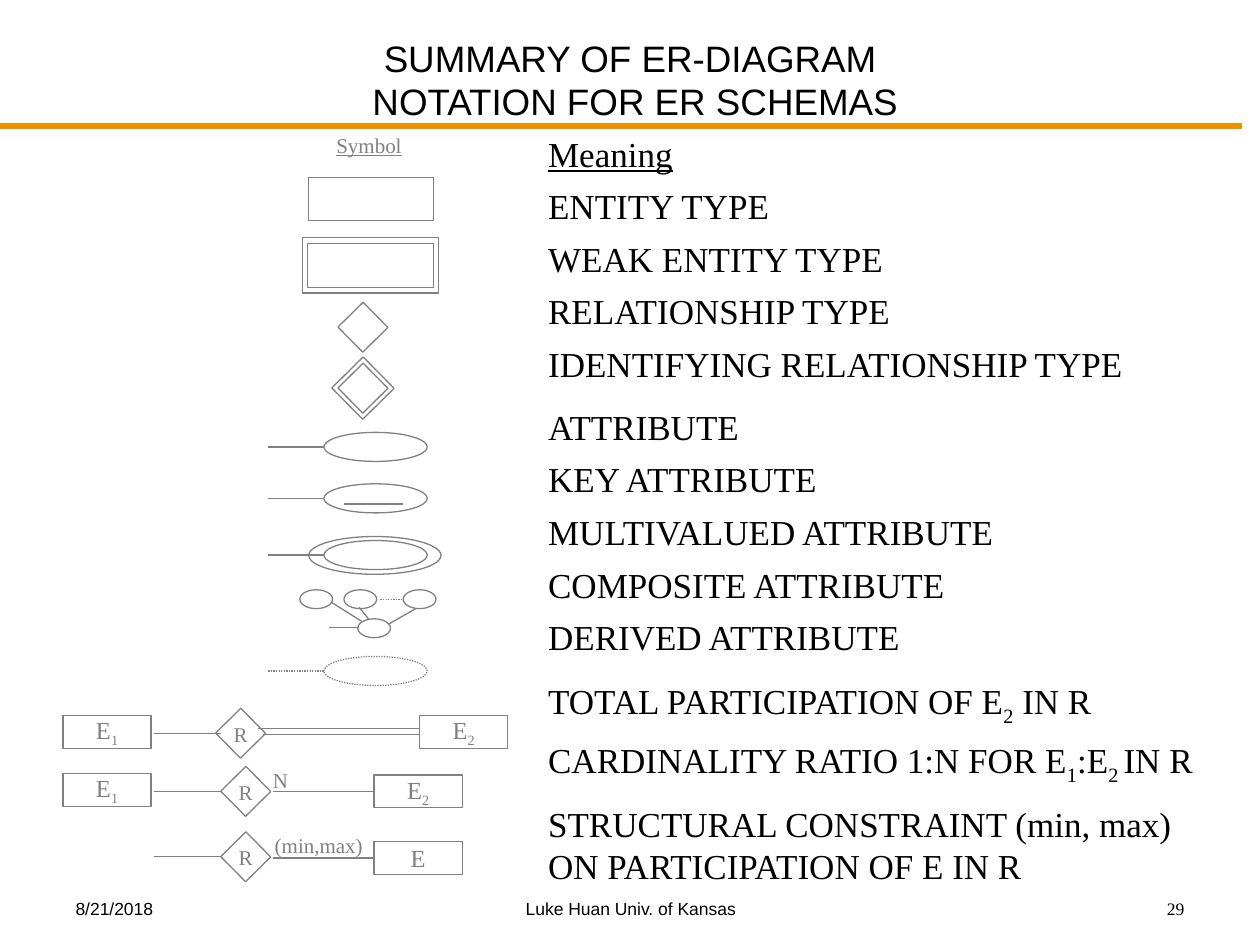
from lxml import etree
from pptx import Presentation, util as u
from pptx.dml.color import RGBColor
from pptx.enum import dml, shapes, text
from pptx.oxml.ns import qn

Pt = u.Pt
COLOURS = {"ink": "000000", "symbol": "808080", "rule": "EF9100"}
SERIF, SANS = "Times New Roman", "Arial"
LEFT, CENTER, RIGHT = text.PP_ALIGN.LEFT, text.PP_ALIGN.CENTER, text.PP_ALIGN.RIGHT
RECT, OVAL = shapes.MSO_SHAPE.RECTANGLE, shapes.MSO_SHAPE.OVAL
DOTTED = dml.MSO_LINE.ROUND_DOT


class SlideBuilder:
    def __init__(self, slide):
        self.slide = slide

    def colour(self, name):
        return RGBColor.from_string(COLOURS[name])

    def frame(self, shape, anchor, wrap):
        frame = shape.text_frame
        frame.margin_left = frame.margin_right = frame.margin_top = frame.margin_bottom = 0
        frame.vertical_anchor = anchor
        frame.word_wrap = wrap
        return frame

    def add_runs(self, paragraph, content, size, font=SERIF, colour="ink",
                 align=LEFT, underline=False):
        paragraph.alignment = align
        for index, part in enumerate(content.split("_")):
            run = paragraph.add_run()
            run.text = part
            run.font.size = Pt(size)
            run.font.name = font
            run.font.color.rgb = self.colour(colour)
            if underline:
                run.font.underline = True
            if index % 2:
                run._r.get_or_add_rPr().set("baseline", "-25000")

    def textbox(self, left, top, width, height, anchor=text.MSO_ANCHOR.TOP, wrap=True):
        box = self.slide.shapes.add_textbox(Pt(left), Pt(top), Pt(width), Pt(height))
        return self.frame(box, anchor, wrap)

    def label(self, content, left, top, width, size=12, **style):
        frame = self.textbox(left, top, width, size * 1.2, wrap=False)
        self.add_runs(frame.paragraphs[0], content, size, **style)

    def outline(self, kind, x, y, width, height, dash=None, rotation=0):
        shape = self.slide.shapes.add_shape(
            kind, Pt(x - width / 2), Pt(y - height / 2), Pt(width), Pt(height))
        shape.shadow.inherit = False
        shape.rotation = rotation
        shape.fill.background()
        self.stroke(shape.line, "symbol", 0.75, dash)
        return shape

    def stroke(self, line, colour, width, dash):
        line.color.rgb = self.colour(colour)
        line.width = Pt(width)
        if dash:
            line.dash_style = dash

    def line(self, x1, y1, x2, y2, dash=None, colour="symbol", width=0.75):
        connector = self.slide.shapes.add_connector(
            shapes.MSO_CONNECTOR.STRAIGHT, Pt(x1), Pt(y1), Pt(x2), Pt(y2))
        self.stroke(connector.line, colour, width, dash)
        etree.SubElement(connector._element.spPr, qn("a:effectLst"))

    def diamond(self, x, y, side=20.2, content=None):
        self.outline(RECT, x, y, side, side, rotation=45.4)
        if content:
            self.label(content, x - 10, y - 6.9, 20, colour="symbol", align=CENTER)

    def entity(self, content, left, y):
        shape = self.outline(RECT, left + 25.2, y, 50.4, 18.7)
        frame = self.frame(shape, text.MSO_ANCHOR.MIDDLE, False)
        self.add_runs(frame.paragraphs[0], content, 14, colour="symbol", align=CENTER)

    def attribute(self, y, dash=None):
        self.outline(OVAL, 214.6, y, 59, 16.6, dash)
        self.line(185, y, 153.4, y, dash)

    def title(self, lines):
        frame = self.textbox(13, 5, 700, 81, text.MSO_ANCHOR.MIDDLE)
        paragraph = frame.paragraphs[0]
        paragraph.line_spacing = Pt(25)
        for index, content in enumerate(lines):
            if index:
                paragraph.add_line_break()
            self.add_runs(paragraph, content, 21, font=SANS, align=CENTER)

    def meanings(self, entries):
        frame = self.textbox(313.2, 75.6, 375.8, 442)
        for index, (content, gap) in enumerate(entries):
            paragraph = frame.add_paragraph() if index else frame.paragraphs[0]
            paragraph.line_spacing = Pt(24)
            paragraph.space_before = Pt(gap)
            self.add_runs(paragraph, content, 20, underline=index == 0)


MEANINGS = [
    ("Meaning", 0),
    ("ENTITY TYPE", 6),
    ("WEAK ENTITY TYPE", 6),
    ("RELATIONSHIP TYPE", 6),
    ("IDENTIFYING RELATIONSHIP TYPE", 6),
    ("ATTRIBUTE", 12),
    ("KEY ATTRIBUTE", 6),
    ("MULTIVALUED ATTRIBUTE", 6),
    ("COMPOSITE ATTRIBUTE", 6),
    ("DERIVED ATTRIBUTE", 6),
    ("TOTAL PARTICIPATION OF E_2_ IN R", 16),
    ("CARDINALITY RATIO 1:N FOR E_1_:E_2 _IN R", 9.5),
    ("STRUCTURAL CONSTRAINT (min, max) ON PARTICIPATION OF E IN R", 9.5),
]


def main():
    presentation = Presentation()
    presentation.slide_width, presentation.slide_height = Pt(720), Pt(540)
    builder = SlideBuilder(presentation.slides.add_slide(presentation.slide_layouts[6]))

    builder.line(0, 72, 710, 72, colour="rule", width=3)
    builder.title(["SUMMARY OF ER-DIAGRAM ", "NOTATION FOR ER SCHEMAS"])
    builder.meanings(MEANINGS)
    builder.label("8/21/2018", 43.2, 513.4, 153, 10, font=SANS)
    builder.label("Luke Huan Univ. of Kansas", 253.4, 513.4, 214, 10, font=SANS, align=CENTER)
    builder.label("29", 523.4, 513.4, 153.4, 10, align=RIGHT)
    builder.label("Symbol", 192.2, 75.6, 40, colour="symbol", underline=True)

    builder.outline(RECT, 212, 113.8, 71.3, 24.5)
    for width, height in [(72, 25.2), (77.8, 31.7)]:
        builder.outline(RECT, 211.7, 151.7, width, height)
    builder.diamond(207.4, 187)
    for side in (20.2, 25.2):
        builder.diamond(207.4, 221.8, side)

    for y in (255.4, 284.8, 317.2):
        builder.attribute(y)
    builder.line(196.6, 288, 230.4, 288)
    builder.outline(OVAL, 214.2, 317.4, 75.6, 21.6)
    builder.attribute(383.4, DOTTED)

    for x, y in [(180.7, 342.4), (205.9, 342.4), (239.8, 342.4), (213.8, 359)]:
        builder.outline(OVAL, x, y, 18.7, 10.8)
    for ends in [(205.2, 358.6, 187.9, 358.6), (189.4, 344.2, 206.6, 355),
                 (205.2, 347, 211, 354.2), (222.5, 356.4, 237.6, 347.8)]:
        builder.line(*ends)
    builder.line(217.4, 342.7, 229.7, 342.7, DOTTED)

    for x, y in [(137.5, 419), (140.4, 452.2), (140.4, 489.6)]:
        builder.line(87.8, y, 126, y)
        builder.diamond(x, y, content="R")
    for ends in [(147.6, 416.2, 239.8, 416.2), (150.5, 419.8, 239.8, 419.8),
                 (156.2, 452.4, 213.8, 452.4), (156.2, 490.3, 213.8, 490.3)]:
        builder.line(*ends)
    for content, left, y in [("E_1", 36, 418.3), ("E_2", 239.8, 418.3), ("E_1", 36, 451.4),
                             ("E_2", 213.8, 452.2), ("E", 213.8, 490.3)]:
        builder.entity(content, left, y)
    builder.label("N", 156, 438.5, 12, colour="symbol")
    builder.label("(min,max)", 157, 475.9, 53, colour="symbol")

    presentation.save("out.pptx")


if __name__ == "__main__":
    main()
